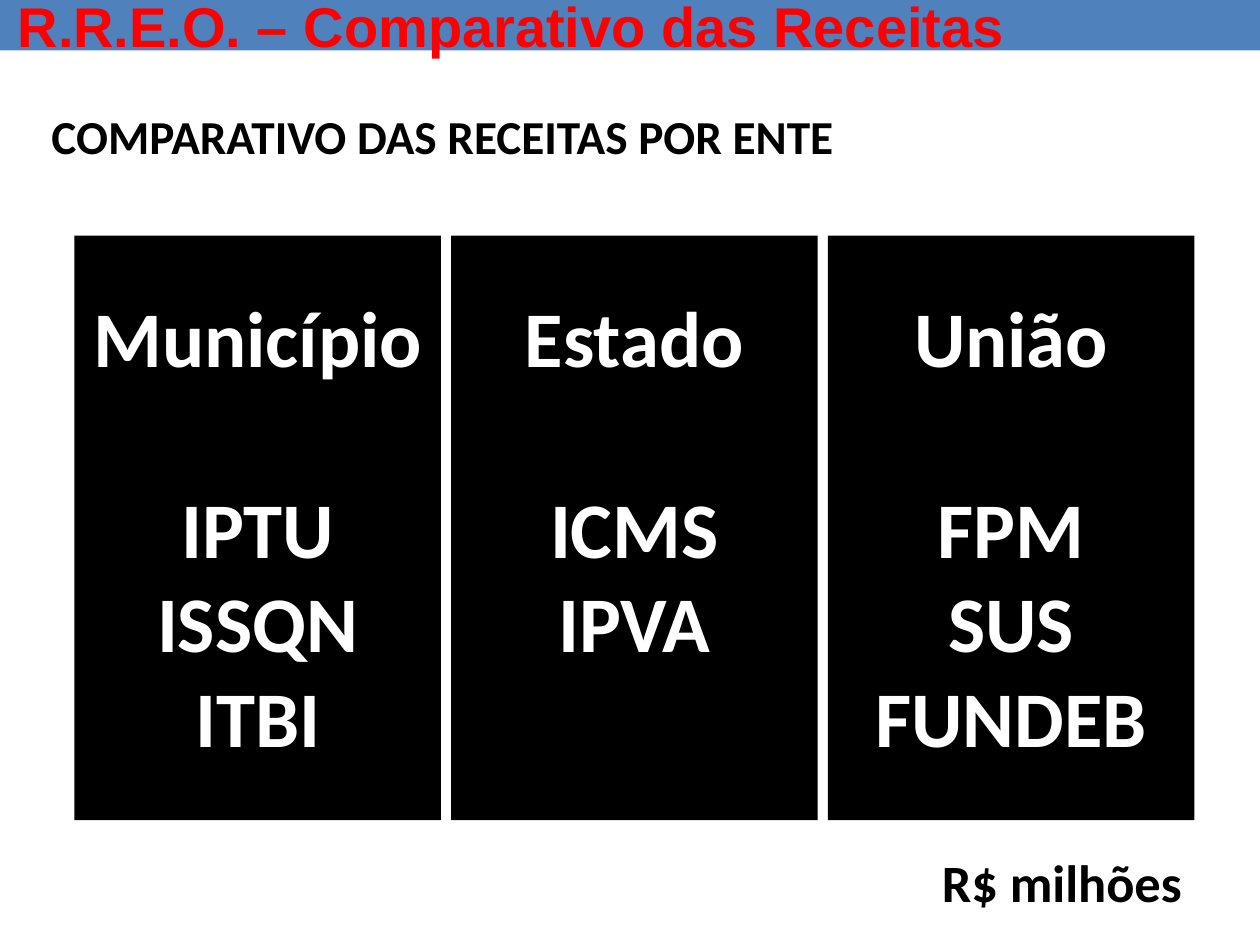
from dataclasses import dataclass

from pptx import Presentation
from pptx.dml.color import RGBColor
from pptx.enum.shapes import MSO_SHAPE
from pptx.enum.text import MSO_ANCHOR, PP_ALIGN
from pptx.util import Inches, Pt


@dataclass(frozen=True)
class Theme:
    bar: RGBColor = RGBColor(0x4F, 0x81, 0xBD)
    title: RGBColor = RGBColor(0xFF, 0x00, 0x00)
    dark: RGBColor = RGBColor(0x00, 0x00, 0x00)
    light: RGBColor = RGBColor(0xFF, 0xFF, 0xFF)
    title_font: str = "Arial"
    body_font: str = "Calibri"
    title_size: int = 32
    column_size: int = 45
    unit_size: int = 30
    subtitle_size: int = 27


THEME = Theme()
REVENUES = {
    "Município": ["IPTU", "ISSQN", "ITBI"],
    "Estado": ["ICMS", "IPVA"],
    "União": ["FPM", "SUS", "FUNDEB"],
}


def format_paragraph(paragraph, name, size, color, alignment):
    paragraph.alignment = alignment
    font = paragraph.font
    font.name = name
    font.size = Pt(size)
    font.bold = True
    font.color.rgb = color


def add_rectangle(slide, box, color):
    shape = slide.shapes.add_shape(MSO_SHAPE.RECTANGLE, *map(Inches, box))
    shape.shadow.inherit = False
    shape.fill.solid()
    shape.fill.fore_color.rgb = color
    shape.line.fill.background()
    return shape


def add_header(slide, bar_box, title_box):
    bar = add_rectangle(slide, bar_box, THEME.bar)
    title = slide.shapes.title
    title.element.addprevious(bar.element)
    title.left, title.top, title.width, title.height = map(Inches, title_box)
    frame = title.text_frame
    frame.text = "R.R.E.O. – Comparativo das Receitas"
    frame.word_wrap = False
    frame.vertical_anchor = MSO_ANCHOR.TOP
    format_paragraph(frame.paragraphs[0], THEME.title_font, THEME.title_size,
                     THEME.title, PP_ALIGN.CENTER)


def add_label(slide, box, text, size, alignment):
    frame = slide.shapes.add_textbox(*map(Inches, box)).text_frame
    frame.word_wrap = True
    frame.vertical_anchor = MSO_ANCHOR.MIDDLE
    frame.text = text
    format_paragraph(frame.paragraphs[0], THEME.body_font, size, THEME.dark, alignment)


def add_column(slide, box, entity, revenues):
    frame = add_rectangle(slide, box, THEME.dark).text_frame
    frame.word_wrap = True
    frame.vertical_anchor = MSO_ANCHOR.TOP
    frame.margin_top = Inches(0.42)
    frame.text = "\n".join([entity, *revenues])
    for paragraph in frame.paragraphs:
        format_paragraph(paragraph, THEME.body_font, THEME.column_size,
                         THEME.light, PP_ALIGN.CENTER)
    frame.paragraphs[1].space_before = Pt(55)


def add_columns(slide, box, gap):
    left, top, width, height = box
    column_width = (width - gap * (len(REVENUES) - 1)) / len(REVENUES)
    for index, (entity, revenues) in enumerate(REVENUES.items()):
        column_left = left + index * (column_width + gap)
        add_column(slide, (column_left, top, column_width, height), entity, revenues)


def main():
    presentation = Presentation()
    presentation.slide_width = Inches(10)
    presentation.slide_height = Inches(7.5)
    slide = presentation.slides.add_slide(presentation.slide_layouts[5])
    add_header(slide, (0, 0, 10, 0.4), (0.01, -0.12, 8.1, 0.64))
    add_columns(slide, (0.59, 1.87, 8.89, 4.64), 0.08)
    add_label(slide, (5.39, 6.63, 4.09, 0.74), "R$ milhões",
              THEME.unit_size, PP_ALIGN.RIGHT)
    add_label(slide, (0.31, 0.68, 7.05, 0.79), "COMPARATIVO DAS RECEITAS POR ENTE",
              THEME.subtitle_size, PP_ALIGN.LEFT)
    presentation.save("out.pptx")


if __name__ == "__main__":
    main()
